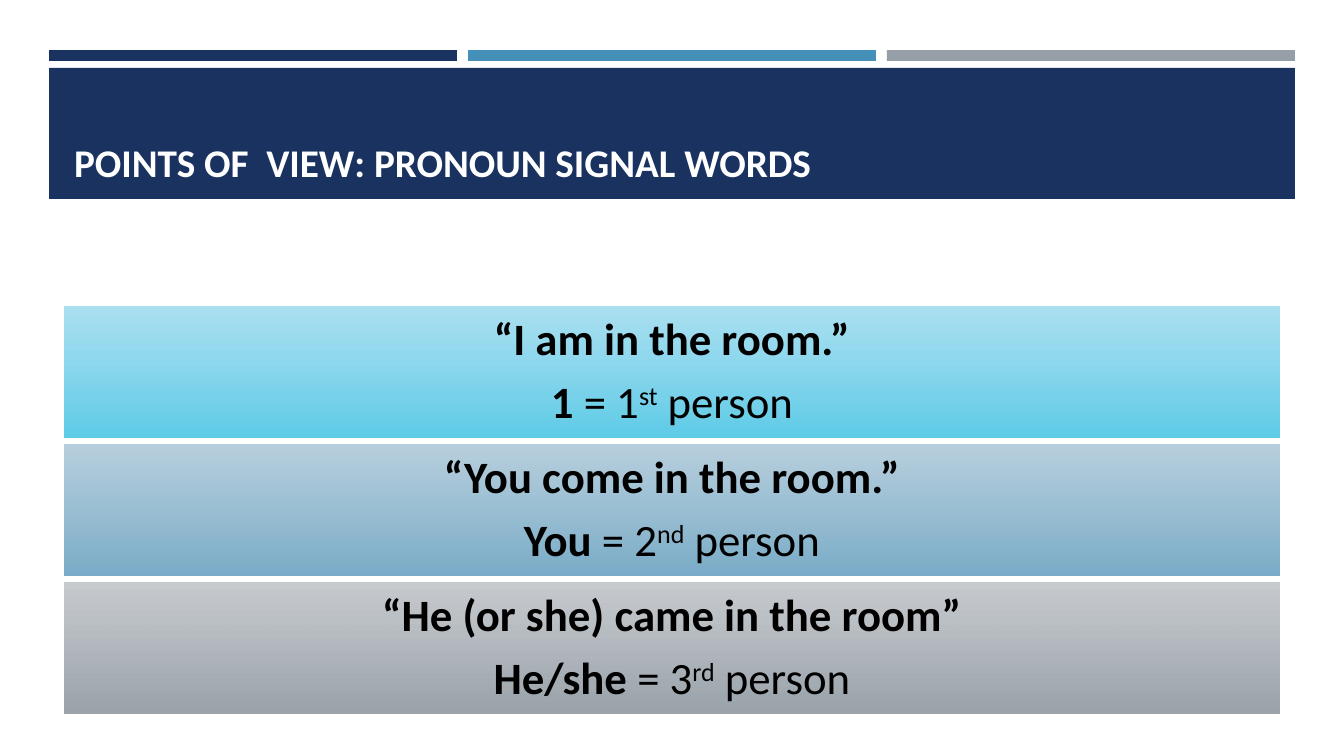
import dataclasses
import typing

import lxml.etree
import pptx
import pptx.dml.color
import pptx.enum.shapes
import pptx.enum.text
import pptx.oxml.ns
import pptx.util

EMU_PER_PX = 914400 / 100.8
FONT = "Calibri"
NAVY = "1A3260"
WHITE = "FFFFFF"
BLACK = "000000"


@dataclasses.dataclass(frozen=True)
class Box:
    left: int
    top: int
    width: int
    height: int


@dataclasses.dataclass(frozen=True)
class Person:
    sentence: str
    pronoun: str
    number: str
    suffix: str
    top_color: str
    bottom_color: str


BANNER = Box(49, 68, 1246, 131)
TITLE = Box(64, 78, 1216, 112)
STRIPE = Box(49, 50, 408, 11)
STRIPE_PITCH = 419
STRIPE_COLORS = (NAVY, "4590B8", "969FA7")
PANEL = Box(64, 307, 1216, 131)
PANEL_PITCH = 138
PERSONS = (
    Person("“I am in the room.”", "1", "1", "st", "A2DDF0", "5FCCE8"),
    Person("“You come in the room.”", "You", "2", "nd", "AFCADA", "7BADC8"),
    Person("“He (or she) came in the room”", "He/she", "3", "rd", "C0C5C9", "9BA3AB"),
)


def px(length: int) -> int:
    return pptx.util.Emu(round(length * EMU_PER_PX))


def rgb(color: str) -> pptx.dml.color.RGBColor:
    return pptx.dml.color.RGBColor.from_string(color)


def add_rectangle(slide: typing.Any, box: Box, color: typing.Optional[str] = None) -> typing.Any:
    shape = slide.shapes.add_shape(
        pptx.enum.shapes.MSO_SHAPE.RECTANGLE,
        px(box.left), px(box.top), px(box.width), px(box.height),
    )
    shape.shadow.inherit = False
    shape.line.fill.background()
    if color:
        shape.fill.solid()
        shape.fill.fore_color.rgb = rgb(color)
    return shape


def add_text(paragraph: typing.Any, text: str, *, size: int = 32, color: str = BLACK,
             bold: bool = False, superscript: bool = False) -> None:
    run = paragraph.add_run()
    run.text = text
    run.font.name = FONT
    run.font.size = pptx.util.Pt(size)
    run.font.bold = bold
    run.font.color.rgb = rgb(color)
    if superscript:
        run._r.get_or_add_rPr().set("baseline", "30000")


def fill_gradient(shape: typing.Any, top_color: str, bottom_color: str) -> None:
    shape.fill.gradient()
    shape.fill.gradient_angle = 270
    for stop, color in zip(shape.fill.gradient_stops, (top_color, bottom_color)):
        stop.color.rgb = rgb(color)
    first_color = shape._element.spPr.find(".//" + pptx.oxml.ns.qn("a:srgbClr"))
    lxml.etree.SubElement(first_color, pptx.oxml.ns.qn("a:alpha"), val="90000")


def add_title(slide: typing.Any) -> None:
    title = slide.shapes.title
    title.left, title.top = px(TITLE.left), px(TITLE.top)
    title.width, title.height = px(TITLE.width), px(TITLE.height)
    frame = title.text_frame
    frame.auto_size = pptx.enum.text.MSO_AUTO_SIZE.NONE
    frame.vertical_anchor = pptx.enum.text.MSO_ANCHOR.BOTTOM
    paragraph = frame.paragraphs[0]
    paragraph.alignment = pptx.enum.text.PP_ALIGN.LEFT
    add_text(paragraph, "POINTS OF  VIEW: PRONOUN SIGNAL WORDS", size=28, color=WHITE, bold=True)
    slide.shapes._spTree.append(title._element)


def add_panel(slide: typing.Any, box: Box, person: Person) -> None:
    shape = add_rectangle(slide, box)
    fill_gradient(shape, person.top_color, person.bottom_color)
    frame = shape.text_frame
    frame.word_wrap = True
    frame.vertical_anchor = pptx.enum.text.MSO_ANCHOR.MIDDLE
    sentence = frame.paragraphs[0]
    signal = frame.add_paragraph()
    for paragraph in (sentence, signal):
        paragraph.alignment = pptx.enum.text.PP_ALIGN.CENTER
        paragraph.line_spacing = 0.9
        paragraph.space_after = pptx.util.Pt(11)
    add_text(sentence, person.sentence, bold=True)
    add_text(signal, person.pronoun, bold=True)
    add_text(signal, f" = {person.number}")
    add_text(signal, person.suffix, superscript=True)
    add_text(signal, " person")


def main() -> None:
    presentation = pptx.Presentation()
    presentation.slide_width = px(1344)
    presentation.slide_height = px(756)
    slide = presentation.slides.add_slide(presentation.slide_layouts[5])
    for index, color in enumerate(STRIPE_COLORS):
        left = STRIPE.left + index * STRIPE_PITCH
        add_rectangle(slide, dataclasses.replace(STRIPE, left=left), color)
    add_rectangle(slide, BANNER, NAVY)
    add_title(slide)
    for index, person in enumerate(PERSONS):
        top = PANEL.top + index * PANEL_PITCH
        add_panel(slide, dataclasses.replace(PANEL, top=top), person)
    presentation.save("out.pptx")


if __name__ == "__main__":
    main()
